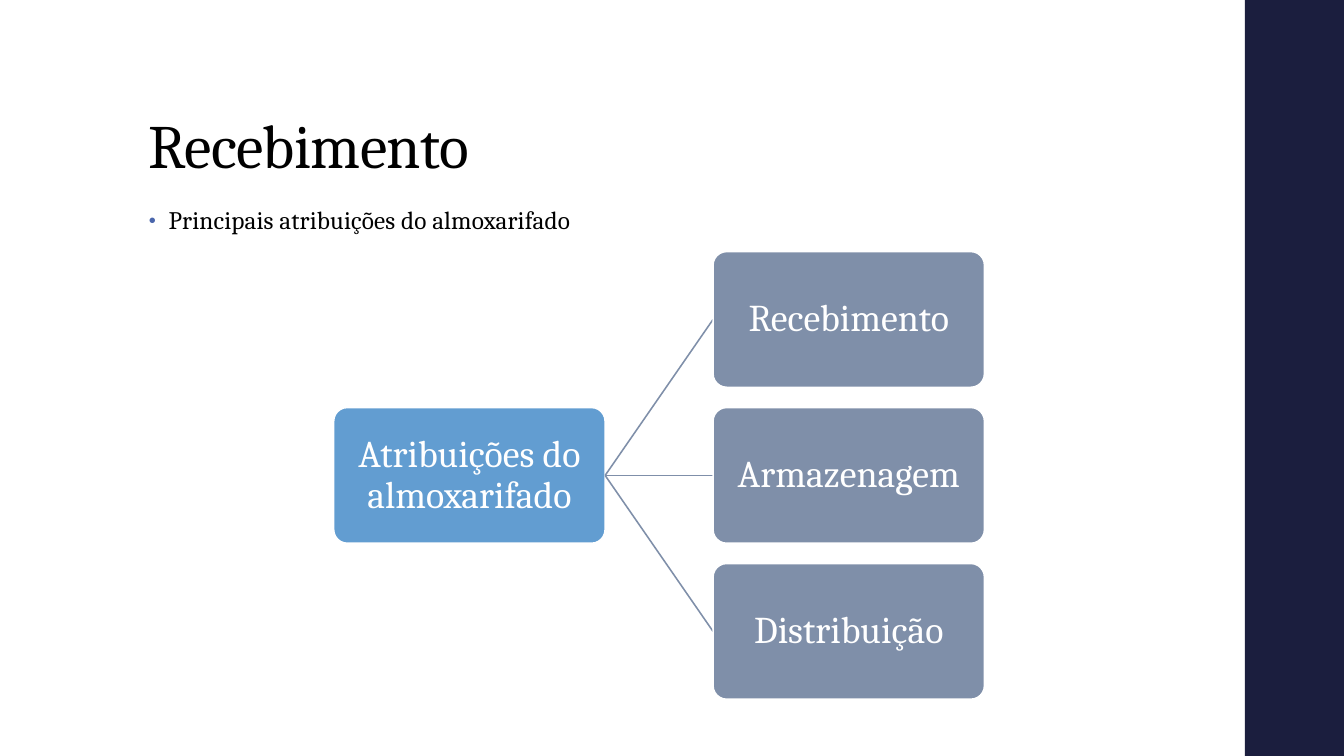
from lxml import etree
from pptx import Presentation
from pptx.dml.color import RGBColor
from pptx.enum.shapes import MSO_CONNECTOR, MSO_SHAPE
from pptx.enum.text import MSO_ANCHOR, PP_ALIGN
from pptx.oxml.ns import qn
from pptx.util import Cm, Pt

RECTANGLE = MSO_SHAPE.RECTANGLE
ROUNDED = MSO_SHAPE.ROUNDED_RECTANGLE
STRAIGHT = MSO_CONNECTOR.STRAIGHT
TOP, MIDDLE, BOTTOM = MSO_ANCHOR.TOP, MSO_ANCHOR.MIDDLE, MSO_ANCHOR.BOTTOM
LEFT, CENTER = PP_ALIGN.LEFT, PP_ALIGN.CENTER
LEFT_SIDE, RIGHT_SIDE = 1, 3

COLORS = {
    "band": "1B1E3E",
    "text": "000000",
    "bullet": "4A66AC",
    "root": "629DD1",
    "branch": "7F8FA9",
    "white": "FFFFFF",
}
FONT = "Cambria"
LINE_WIDTH = Pt(1.1)
TITLE_FRAME = {"word_wrap": True, "vertical_anchor": BOTTOM}
BODY_FRAME = {"word_wrap": True, "vertical_anchor": TOP}
NODE_FRAME = {
    "word_wrap": True,
    "vertical_anchor": MIDDLE,
    "margin_left": Cm(0.15),
    "margin_right": Cm(0.15),
    "margin_top": Cm(0.15),
    "margin_bottom": Cm(0.15),
}


def color(name):
    return RGBColor.from_string(COLORS[name])


def apply(target, values):
    for attribute, value in values.items():
        setattr(target, attribute, value)


def write(shape, text, frame_format, size, color_name, align, line_spacing, tracking=0):
    frame = shape.text_frame
    apply(frame, frame_format)
    paragraph = frame.paragraphs[0]
    apply(paragraph, {"alignment": align, "line_spacing": line_spacing})
    run = paragraph.add_run()
    run.text = text
    apply(run.font, {"name": FONT, "size": Pt(size)})
    run.font.color.rgb = color(color_name)
    if tracking:
        run.font._element.set("spc", str(tracking))
    return paragraph


def add_bullet(paragraph):
    properties = paragraph._p.get_or_add_pPr()
    indent = Cm(0.5)
    properties.set("marL", str(indent))
    properties.set("indent", str(-indent))
    bullet_color = etree.SubElement(properties, qn("a:buClr"))
    etree.SubElement(bullet_color, qn("a:srgbClr"), val=COLORS["bullet"])
    etree.SubElement(properties, qn("a:buSzPct"), val="80000")
    etree.SubElement(properties, qn("a:buFont"), typeface="Arial")
    etree.SubElement(properties, qn("a:buChar"), char="•")


def draw_side_band(slide, left, top, width, height):
    band = slide.shapes.add_shape(RECTANGLE, left, top, width, height)
    band.shadow.inherit = False
    band.fill.solid()
    band.fill.fore_color.rgb = color("band")
    band.line.fill.background()


def draw_heading(slide, left, top, width, height, title, topic):
    title_height = Cm(3.68)
    topic_top = Cm(4.06)
    heading = slide.shapes.add_textbox(left, top, width, title_height)
    write(heading, title, TITLE_FRAME, 44, "text", LEFT, 0.9, -50)
    body = slide.shapes.add_textbox(left, top + topic_top, width, height - topic_top)
    add_bullet(write(body, topic, BODY_FRAME, 18, "text", LEFT, 0.95, 10))


def draw_node(slide, left, top, width, height, text, fill):
    node = slide.shapes.add_shape(ROUNDED, left, top, width, height)
    node.shadow.inherit = False
    node.adjustments[0] = 0.1
    node.fill.solid()
    node.fill.fore_color.rgb = color(fill)
    node.line.color.rgb = color("white")
    node.line.width = LINE_WIDTH
    write(node, text, NODE_FRAME, 27, "white", CENTER, 0.9)
    return node


def draw_hierarchy(slide, left, top, width, height, root_text, branch_texts):
    node_width, node_height = Cm(6.84), Cm(3.42)
    pitch = (height - node_height) // (len(branch_texts) - 1)
    branch_left = left + width - node_width
    root_top = top + (height - node_height) // 2
    root = draw_node(slide, left, root_top, node_width, node_height, root_text, "root")
    for row, text in enumerate(branch_texts):
        link = slide.shapes.add_connector(STRAIGHT, left, top, left, top)
        link.line.color.rgb = color("branch")
        link.line.width = LINE_WIDTH
        etree.SubElement(link._element.spPr, qn("a:effectLst"))
        branch = draw_node(slide, branch_left, top + row * pitch,
                           node_width, node_height, text, "branch")
        link.begin_connect(root, RIGHT_SIDE)
        link.end_connect(branch, LEFT_SIDE)


def main():
    deck = Presentation()
    apply(deck, {"slide_width": Cm(33.87), "slide_height": Cm(19.05)})
    slide = deck.slides.add_slide(deck.slide_layouts[6])
    draw_side_band(slide, Cm(31.37), 0, Cm(2.5), deck.slide_height)
    draw_heading(slide, Cm(3.5), Cm(1.02), Cm(23.88), Cm(5.3),
                 "Recebimento", "Principais atribuições do almoxarifado")
    draw_hierarchy(slide, Cm(8.41), Cm(6.34), Cm(16.4), Cm(11.28),
                   "Atribuições do almoxarifado",
                   ["Recebimento", "Armazenagem", "Distribuição"])
    deck.save("out.pptx")


if __name__ == "__main__":
    main()
